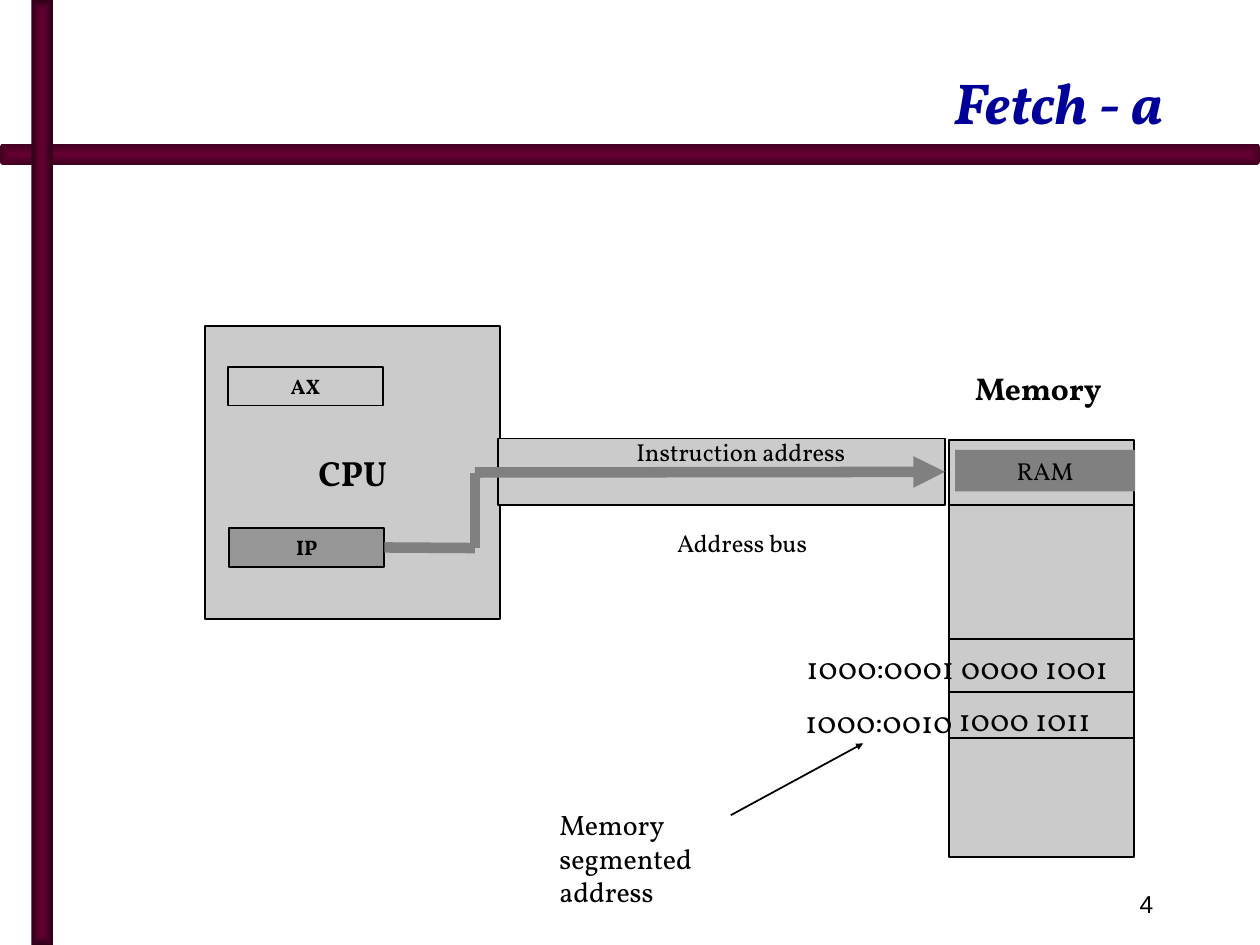
from dataclasses import dataclass
from typing import Optional

from lxml import etree
from pptx import Presentation
from pptx.dml.color import RGBColor as RGB
from pptx.enum.shapes import MSO_CONNECTOR as Conn, MSO_SHAPE as Shape
from pptx.enum.text import MSO_ANCHOR as Anchor, MSO_AUTO_SIZE as AutoSize, PP_ALIGN as Align
from pptx.oxml.ns import qn
from pptx.util import Inches, Pt


@dataclass(frozen=True)
class Theme:
    font: str = "Vollkorn"
    number_font: str = "Arial"
    ink: str = "000000"
    title: str = "000099"
    panel: str = "CBCBCB"
    register: str = "969696"
    signal: str = "808080"
    bar: str = "660033"
    bar_across: str = "410020"
    bar_down: str = "2F0018"
    title_size: int = 33
    cpu_size: int = 20
    body_size: int = 18
    note_size: int = 16
    label_size: int = 14
    register_size: int = 12
    thin: float = 1
    thick: float = 6


THEME = Theme()


@dataclass(frozen=True)
class Box:
    left: float
    top: float
    width: float
    height: float
    fill: Optional[str] = None
    line: Optional[str] = THEME.ink
    text: str = ""
    size: int = THEME.register_size
    bold: bool = False


@dataclass(frozen=True)
class Label:
    text: str
    left: float
    top: float
    width: float
    height: float
    size: int = THEME.body_size
    bold: bool = False
    align: Align = Align.CENTER
    inset_x: float = 0.1
    inset_y: float = 0.05
    anchor: Anchor = Anchor.TOP
    font: str = THEME.font


@dataclass(frozen=True)
class Line:
    x1: float
    y1: float
    x2: float
    y2: float
    color: str = THEME.ink
    weight: float = THEME.thin
    arrow: Optional[str] = None  # arrowhead size: "sm", "med" or "lg"


def style_text(p, size: int, bold: bool, align: Align, color: str = THEME.ink,
               font: str = THEME.font) -> None:
    p.alignment = align
    p.font.name, p.font.size, p.font.bold = font, Pt(size), bold
    p.font.color.rgb = RGB.from_string(color)


def add_box(slide, box: Box):
    sp = slide.shapes.add_shape(Shape.RECTANGLE, Inches(box.left), Inches(box.top),
                                Inches(box.width), Inches(box.height))
    sp.shadow.inherit = False
    if box.fill:
        sp.fill.solid()
        sp.fill.fore_color.rgb = RGB.from_string(box.fill)
    else:
        sp.fill.background()
    if box.line:
        sp.line.color.rgb = RGB.from_string(box.line)
        sp.line.width = Pt(THEME.thin)
    else:
        sp.line.fill.background()
    if box.text:
        tf = sp.text_frame
        tf.text = box.text
        tf.vertical_anchor = Anchor.MIDDLE
        style_text(tf.paragraphs[0], box.size, box.bold, Align.CENTER)
    return sp


def add_label(slide, label: Label) -> None:
    tf = slide.shapes.add_textbox(Inches(label.left), Inches(label.top),
                                  Inches(label.width), Inches(label.height)).text_frame
    tf.text = label.text
    tf.word_wrap = True
    tf.vertical_anchor = label.anchor
    tf.margin_left = tf.margin_right = Inches(label.inset_x)
    tf.margin_top = tf.margin_bottom = Inches(label.inset_y)
    p = tf.paragraphs[0]
    style_text(p, label.size, label.bold, label.align, font=label.font)
    if label.font != THEME.font:
        p.runs[0].font.name = label.font


def add_line(slide, line: Line):
    cx = slide.shapes.add_connector(Conn.STRAIGHT, Inches(line.x1), Inches(line.y1),
                                    Inches(line.x2), Inches(line.y2))
    cx.line.color.rgb = RGB.from_string(line.color)
    cx.line.width = Pt(line.weight)
    if line.arrow:
        etree.SubElement(cx.line._get_or_add_ln(), qn("a:tailEnd"),
                         type="triangle", w=line.arrow, len=line.arrow)
    etree.SubElement(cx._element.spPr, qn("a:effectLst"))
    return cx


def add_bar(slide, shape: Shape, left: float, top: float, width: float, height: float,
            edge: str) -> None:
    """Decorative bar, shaded from its centre out to the edge colour."""
    sp = slide.shapes.add_shape(shape, Inches(left), Inches(top), Inches(width), Inches(height))
    sp.shadow.inherit = False
    sp.line.fill.background()
    sp.fill.gradient()
    for stop, color in zip(sp.fill.gradient_stops, (THEME.bar, edge)):
        stop.color.rgb = RGB.from_string(color)
    grad = sp._element.spPr.find(qn("a:gradFill"))
    grad.remove(grad.find(qn("a:lin")))
    shade = etree.SubElement(grad, qn("a:path"), path="shape")
    etree.SubElement(shade, qn("a:fillToRect"), dict.fromkeys("ltrb", "50000"))


def add_title(slide, text: str) -> None:
    title = slide.shapes.title
    title.left, title.top = Inches(0.83), Inches(0.17)
    title.width, title.height = Inches(8.5), Inches(0.96)
    tf = title.text_frame
    tf.text = text
    tf.auto_size = AutoSize.NONE
    tf.vertical_anchor = Anchor.BOTTOM
    p = tf.paragraphs[0]
    style_text(p, THEME.title_size, True, Align.RIGHT, THEME.title)
    p.font.italic = True


def main() -> None:
    prs = Presentation()
    prs.slide_width, prs.slide_height = Inches(10), Inches(7.5)
    slide = prs.slides.add_slide(prs.slide_layouts[5])

    # Frame and title
    add_bar(slide, Shape.ROUNDED_RECTANGLE, 0, 1.14, 10, 0.17, THEME.bar_across)
    add_bar(slide, Shape.RECTANGLE, 0.25, 0, 0.17, 7.5, THEME.bar_down)
    add_title(slide, "Fetch - a")

    # CPU with its registers, and memory with its cells
    add_box(slide, Box(1.63, 2.59, 2.34, 2.32, THEME.panel, text="CPU",
                       size=THEME.cpu_size, bold=True))
    add_box(slide, Box(7.53, 3.49, 1.47, 3.31, THEME.panel))
    add_box(slide, Box(1.81, 2.91, 1.23, 0.31, text="AX", bold=True))
    ip = add_box(slide, Box(1.82, 4.19, 1.23, 0.31, THEME.register, text="IP", bold=True))
    for y in (4.01, 5.07, 5.49, 5.86):
        add_line(slide, Line(7.54, y, 9, y))

    # Address bus and the path from IP to memory
    bus = add_box(slide, Box(3.95, 3.48, 3.55, 0.53, THEME.panel))
    turn_x, ip_y, bus_y = 3.77, 4.35, 3.75
    signal = dict(color=THEME.signal, weight=THEME.thick)
    add_line(slide, Line(3.05, ip_y, turn_x, ip_y, **signal)).begin_connect(ip, 3)
    add_line(slide, Line(turn_x, ip_y, turn_x, bus_y, **signal))
    add_line(slide, Line(turn_x, bus_y, 7.5, bus_y, arrow="med", **signal)).end_connect(bus, 3)
    add_box(slide, Box(7.58, 3.57, 1.43, 0.33, THEME.signal, None, "RAM", THEME.label_size))

    # Captions, memory contents and segmented addresses
    tight = dict(align=Align.LEFT, inset_x=0.02, inset_y=0.01)
    labels = [
        Label("Memory", 7.4, 2.88, 1.68, 0.4, bold=True),
        Label("Instruction address", 4.67, 3.42, 2.42, 0.34, THEME.label_size),
        Label("Address bus", 4.68, 4.14, 2.42, 0.33, THEME.label_size),
        Label("0000 1001", 7.53, 5.09, 1.69, 0.4, align=Align.LEFT),
        Label("1000 1011", 7.51, 5.51, 1.69, 0.4, align=Align.LEFT),
        Label("1000:0001", 6.38, 5.13, 1.47, 0.32, **tight),
        Label("1000:0010", 6.37, 5.56, 1.47, 0.32, **tight),
        Label("Memory segmented address", 4.42, 6.4, 1.88, 0.83, THEME.note_size, **tight),
        Label("4", 7.17, 6.92, 2.08, 0.5, THEME.label_size, align=Align.RIGHT,
              anchor=Anchor.MIDDLE, font=THEME.number_font),
    ]
    for label in labels:
        add_label(slide, label)
    add_line(slide, Line(5.8, 6.47, 6.85, 5.9, arrow="sm"))

    prs.save("out.pptx")


if __name__ == "__main__":
    main()
